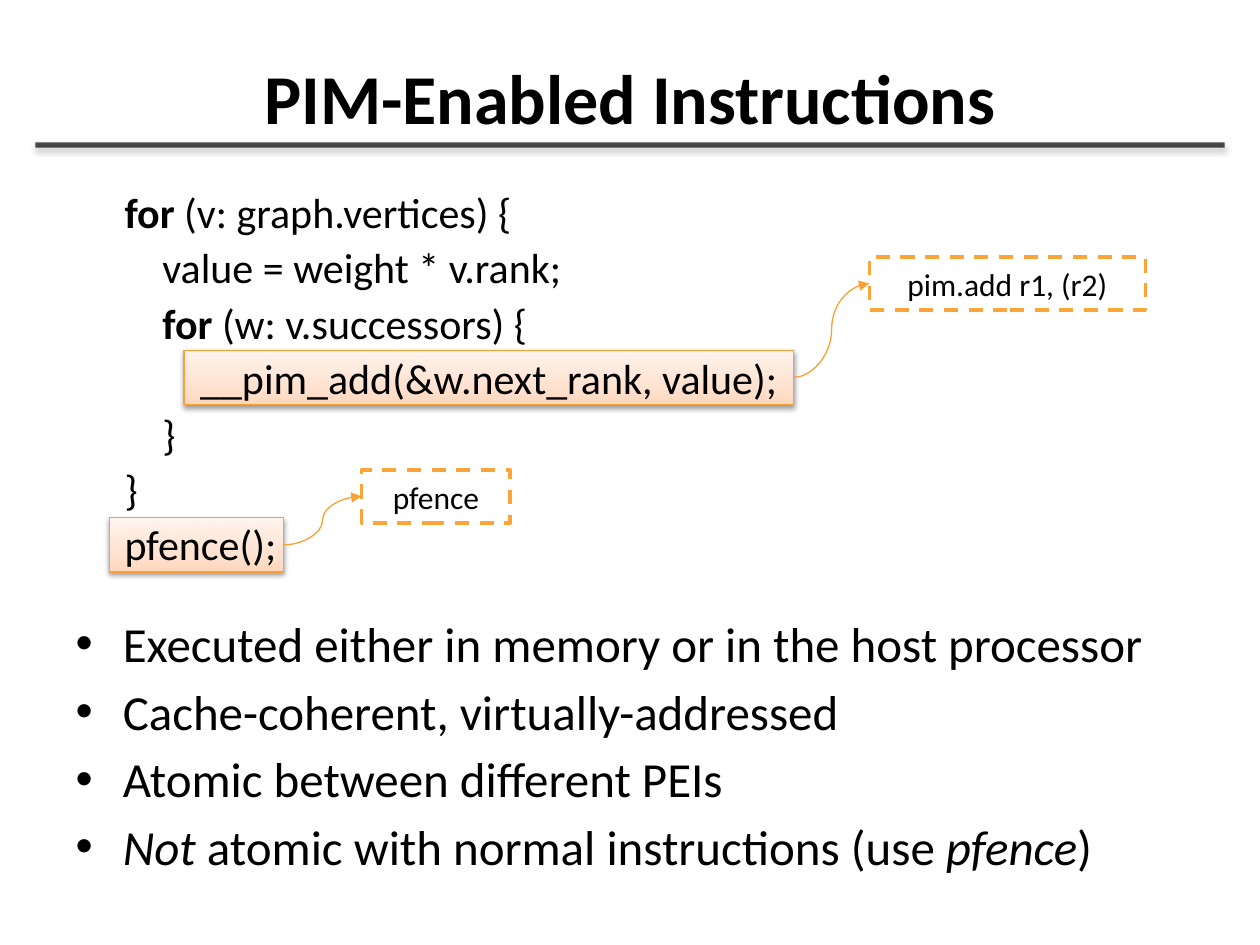
from dataclasses import dataclass

from lxml import etree
from pptx import Presentation
from pptx.dml.color import RGBColor
from pptx.enum.dml import MSO_LINE
from pptx.enum.shapes import MSO_CONNECTOR, MSO_SHAPE
from pptx.enum.text import MSO_ANCHOR, MSO_AUTO_SIZE, PP_ALIGN
from pptx.oxml.ns import qn
from pptx.util import Inches, Pt

RECTANGLE = MSO_SHAPE.RECTANGLE
STRAIGHT, CURVE = MSO_CONNECTOR.STRAIGHT, MSO_CONNECTOR.CURVE
DASH = MSO_LINE.DASH
CENTER = PP_ALIGN.CENTER
MIDDLE, BOTTOM = MSO_ANCHOR.MIDDLE, MSO_ANCHOR.BOTTOM
NO_FIT = MSO_AUTO_SIZE.NONE
LEFT_SIDE, RIGHT_SIDE = 1, 3


@dataclass(frozen=True)
class Theme:
    """Colours and type sizes of the slide."""
    font: str = "Calibri"
    ink: str = "000000"
    paper: str = "FFFFFF"
    edge: str = "F9A134"
    dashed_edge: str = "FAA43A"
    glow: tuple = ((0, "FFD7BD"), (35, "FFE2D1"), (100, "FFF4ED"))
    title: int = 40
    bullet: int = 28
    code: int = 24
    callout: int = 18


THEME = Theme()
INDENT = 0.3
CODE = [
    (0, [("for", "b"), (" (v: graph.vertices) {", "")]),
    (1, [("value = weight * v.rank;", "")]),
    (1, [("for", "b"), (" (w: v.successors) {", "")]),
    (2, [("__pim_add(&w.next_rank, value);", "")]),
    (1, [("}", "")]),
    (0, [("}", "")]),
    (0, [("pfence();", "")]),
]
BULLETS = [
    [("Executed either in memory or in the host processor", "")],
    [("Cache-coherent, virtually-addressed", "")],
    [("Atomic between different PEIs", "")],
    [("Not", "i"), (" atomic with normal instructions (use ", ""),
     ("pfence", "i"), (")", "")],
]
CALLOUTS = [
    ((1.46, 2.78, 4.84, 0.43), (6.9, 2.04, 2.19, 0.42), "pim.add r1, (r2)"),
    ((0.87, 4.11, 1.38, 0.43), (2.87, 3.73, 1.18, 0.42), "pfence"),
]


def inches(box):
    """Turn a box of numbers into lengths."""
    return [Inches(value) for value in box]


def place(shape, box):
    """Move a shape into a box."""
    shape.left, shape.top, shape.width, shape.height = inches(box)


def style_font(font, size):
    """Set the theme font and ink at a given size."""
    font.name, font.size = THEME.font, Pt(size)
    font.color.rgb = RGBColor.from_string(THEME.ink)


def style_line(line, color, width):
    """Set the colour and width of a line."""
    line.color.rgb = RGBColor.from_string(color)
    line.width = Pt(width)


def add_xml(parent, tag, **attributes):
    """Append a drawing element with the given attributes."""
    child = etree.SubElement(parent, qn(tag))
    for name, value in attributes.items():
        child.set(name, str(value))
    return child


def set_shadow(shape, opacity=0, distance=0):
    """Give a shape a downward shadow, or none at zero opacity."""
    effects = add_xml(shape._element.spPr, "a:effectLst")
    if opacity:
        shadow = add_xml(effects, "a:outerShdw", blurRad=Pt(3.1),
                         dist=Pt(distance), dir=90 * 60000, rotWithShape=0)
        color = add_xml(shadow, "a:srgbClr", val=THEME.ink)
        add_xml(color, "a:alpha", val=opacity * 1000)


def fill_paragraphs(frame, paragraphs, size):
    """Write paragraphs of marked spans and return them."""
    for number, spans in enumerate(paragraphs):
        para = frame.add_paragraph() if number else frame.paragraphs[0]
        style_font(para.font, size)
        for text, mark in spans:
            span = para.add_run()
            span.text = text
            if mark == "b":
                span.font.bold = True
            elif mark == "i":
                span.font.italic = True
    return frame.paragraphs


def add_title(page, box):
    """Place the title and the rule below it."""
    title = page.shapes.title
    place(title, box)
    title.text_frame.auto_size = NO_FIT
    title.text_frame.vertical_anchor = BOTTOM
    para = fill_paragraphs(title.text_frame,
                           [[("PIM-Enabled Instructions", "")]], THEME.title)[0]
    para.alignment = CENTER
    para.font.bold = True

    left, top, width, height = box
    rule_y = Inches(top + height)
    rule = page.shapes.add_connector(STRAIGHT, Inches(left - 0.22), rule_y,
                                     Inches(left + width + 0.22), rule_y)
    style_line(rule.line, THEME.ink, 3)
    color = rule._element.spPr.find(".//" + qn("a:srgbClr"))
    add_xml(color, "a:alpha", val=70000)
    set_shadow(rule, 35, 1.8)


def add_bullets(page, box):
    """Place the bullet list in the body placeholder."""
    body = page.placeholders[1]
    place(body, box)
    body.text_frame.auto_size = NO_FIT
    for para in fill_paragraphs(body.text_frame, BULLETS, THEME.bullet):
        para.space_before = Pt(5)


def add_highlight(page, box):
    """Draw a shaded box behind a line of code."""
    highlight = page.shapes.add_shape(RECTANGLE, *inches(box))
    highlight.fill.gradient()
    highlight.fill.gradient_angle = 90
    stops = highlight._element.spPr.find(".//" + qn("a:gsLst"))
    for stop in list(stops):
        stops.remove(stop)
    for position, color in THEME.glow:
        stop = add_xml(stops, "a:gs", pos=position * 1000)
        add_xml(stop, "a:srgbClr", val=color)
    style_line(highlight.line, THEME.edge, 0.75)
    set_shadow(highlight, 38, 1.6)
    return highlight


def add_code(page, box):
    """Place the code listing, indented by nesting level."""
    frame = page.shapes.add_textbox(*inches(box)).text_frame
    frame.word_wrap = True
    paragraphs = fill_paragraphs(frame, [spans for _, spans in CODE], THEME.code)
    for para, (level, _) in zip(paragraphs, CODE):
        para.line_spacing = 1.1
        para._p.get_or_add_pPr().set("marL", str(Inches(level * INDENT)))


def add_callout(page, box, text, highlight):
    """Draw a dashed instruction box and the curve leading to it."""
    callout = page.shapes.add_shape(RECTANGLE, *inches(box))
    callout.fill.solid()
    callout.fill.fore_color.rgb = RGBColor.from_string(THEME.paper)
    style_line(callout.line, THEME.dashed_edge, 2)
    callout.line.dash_style = DASH
    set_shadow(callout)
    callout.text_frame.vertical_anchor = MIDDLE
    para = fill_paragraphs(callout.text_frame, [[(text, "")]], THEME.callout)[0]
    para.alignment = CENTER

    curve = page.shapes.add_connector(CURVE, 0, 0, 0, 0)
    curve.begin_connect(highlight, RIGHT_SIDE)
    curve.end_connect(callout, LEFT_SIDE)
    style_line(curve.line, THEME.edge, 0.75)
    add_xml(curve.line._get_or_add_ln(), "a:tailEnd", type="triangle")
    set_shadow(curve)


def main():
    """Build the slide and save it."""
    deck = Presentation()
    deck.slide_width, deck.slide_height = Inches(10), Inches(7.5)
    page = deck.slides.add_slide(deck.slide_layouts[1])
    add_title(page, (0.5, 0.3, 9, 0.85))
    add_bullets(page, (0.5, 4.82, 9, 2.22))
    highlights = [add_highlight(page, box) for box, _, _ in CALLOUTS]
    add_code(page, (0.89, 1.39, 8.29, 3.21))
    for highlight, (_, box, text) in zip(highlights, CALLOUTS):
        add_callout(page, box, text, highlight)
    deck.save("out.pptx")


if __name__ == "__main__":
    main()
